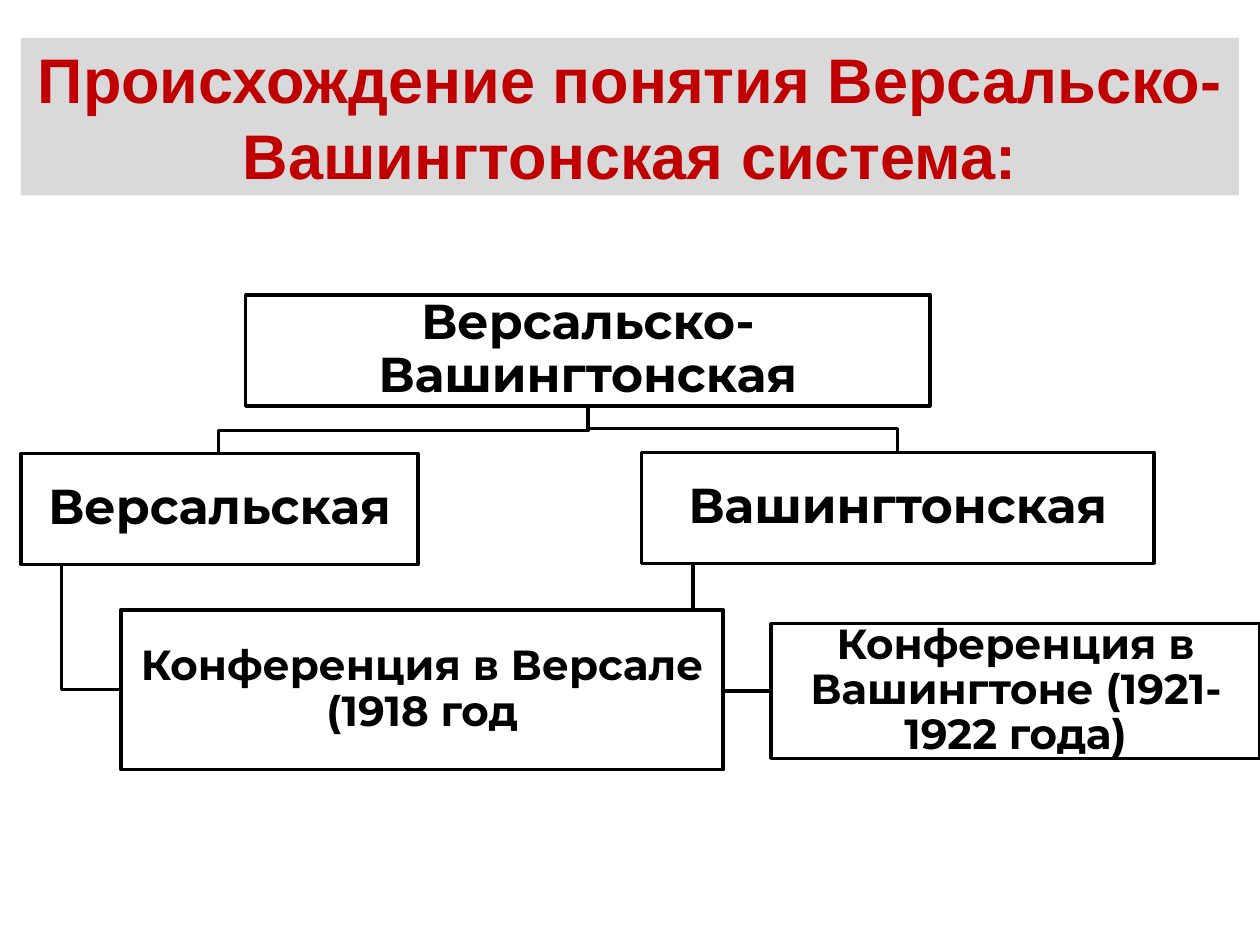
import pptx
import pptx.util
import pptx.dml.color
import pptx.enum.shapes
import pptx.enum.text

Pt = pptx.util.Pt
CENTER = pptx.enum.text.PP_ALIGN.CENTER
MIDDLE = pptx.enum.text.MSO_ANCHOR.MIDDLE


def color(hex_string):
    return pptx.dml.color.RGBColor.from_string(hex_string)


def write(shape, text, font, size, hex_string, frame_format, para_format):
    """Put one bold paragraph, formatted from dicts, into a shape."""
    frame = shape.text_frame
    for name, value in frame_format.items():
        setattr(frame, name, value)
    para = frame.paragraphs[0]
    for name, value in para_format.items():
        setattr(para, name, value)
    span = para.add_run()
    span.text = text
    for name, value in {"name": font, "size": Pt(size), "bold": True}.items():
        setattr(span.font, name, value)
    span.font.color.rgb = color(hex_string)


deck = pptx.Presentation()
deck.slide_width, deck.slide_height = Pt(720), Pt(540)
page = deck.slides.add_slide(deck.slide_layouts[5])

# Title
title = page.shapes.title
title.left, title.top, title.width, title.height = Pt(12), Pt(21.6), Pt(696), Pt(90)
title.fill.solid()
title.fill.fore_color.rgb = color("D9D9D9")
write(title, "Происхождение понятия Версальско-Вашингтонская система:",
      "Arial", 36, "C00000",
      {"word_wrap": True, "vertical_anchor": MIDDLE,
       "auto_size": pptx.enum.text.MSO_AUTO_SIZE.NONE},
      {"alignment": CENTER})

# Boxes of the chart: text, size of text, left, top, width, height
boxes = {
    "system": ("Версальско-Вашингтонская", 28, 140.4, 168.5, 391, 63.4),
    "versailles": ("Версальская", 28, 12, 259.2, 226.8, 63.4),
    "versailles conference": ("Конференция в Версале (1918 год", 24, 69.1, 348.5, 344.2, 91.4),
    "washington": ("Вашингтонская", 28, 366.5, 258.5, 293, 63.4),
    "washington conference": ("Конференция в Вашингтоне (1921-1922 года)", 24,
                              440.6, 356.4, 279.4, 77),
}

# Elbow lines: from the system down to each branch, then from a point
# one tenth along the branch's bottom to the side of its conference
_, _, left, top, width, height = boxes["system"]
trunk_x, trunk_y = left + width / 2, top + height
routes = []
for branch in ("versailles", "washington"):
    _, _, left, top, width, height = boxes[branch]
    _, _, leaf_left, leaf_top, _, leaf_height = boxes[branch + " conference"]
    middle_x, bend_y = left + width / 2, (trunk_y + top) / 2
    stem_x, leaf_y = left + width / 10, leaf_top + leaf_height / 2
    routes.append([(trunk_x, trunk_y), (trunk_x, bend_y), (middle_x, bend_y), (middle_x, top)])
    routes.append([(stem_x, top + height), (stem_x, leaf_y), (leaf_left, leaf_y)])

for start, *corners in routes:
    builder = page.shapes.build_freeform(*start, scale=Pt(1))
    builder.add_line_segments(corners, close=False)
    elbow = builder.convert_to_shape()
    elbow.shadow.inherit = False
    elbow.fill.background()
    elbow.line.color.rgb = color("000000")
    elbow.line.width = Pt(2)

frame_format = {"word_wrap": True, "vertical_anchor": MIDDLE}
for side in ("left", "top", "right", "bottom"):
    frame_format["margin_" + side] = Pt(1.4)

for text, size, *place in boxes.values():
    box = page.shapes.add_shape(pptx.enum.shapes.MSO_SHAPE.RECTANGLE, *map(Pt, place))
    box.shadow.inherit = False
    box.fill.solid()
    box.fill.fore_color.rgb = color("FFFFFF")
    box.line.color.rgb = color("000000")
    box.line.width = Pt(2)
    write(box, text, "Montserrat", size, "000000", frame_format,
          {"alignment": CENTER, "line_spacing": 0.9})

deck.save("out.pptx")
